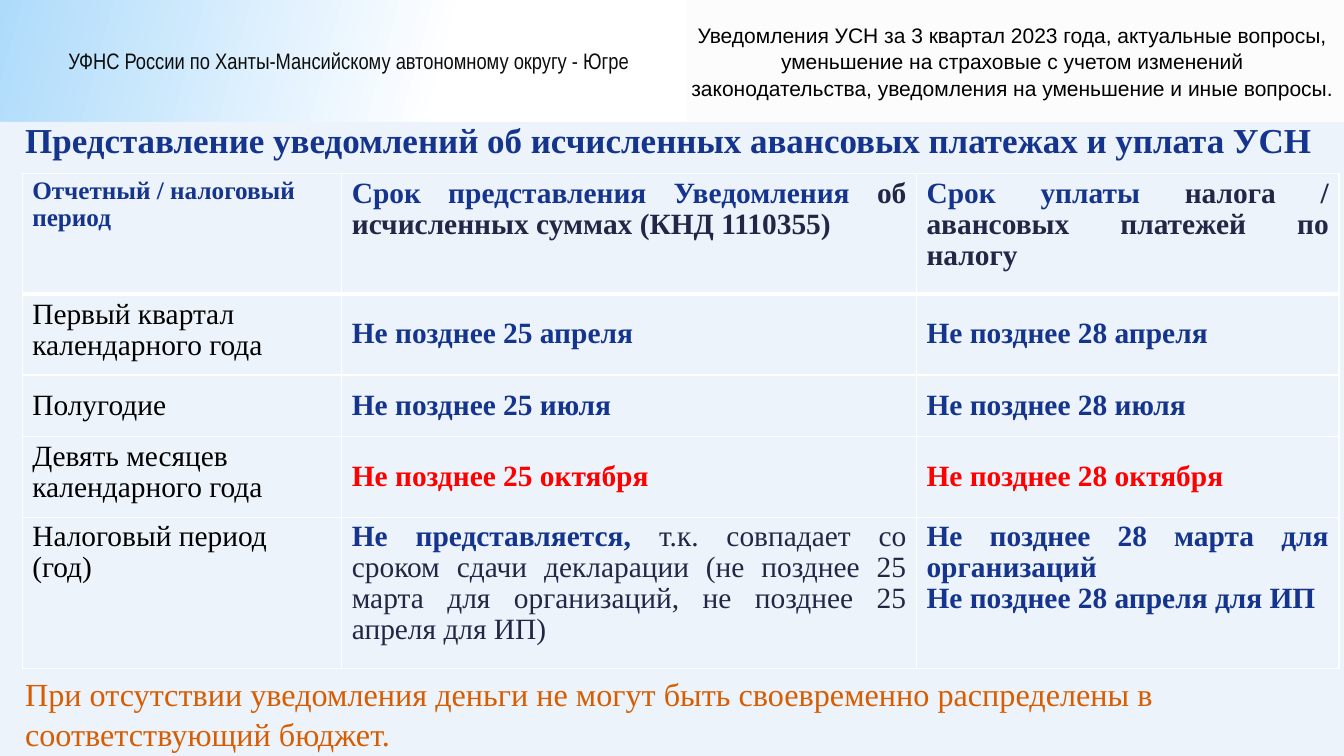
from dataclasses import dataclass

from lxml import etree
from pptx import Presentation
from pptx.dml.color import RGBColor
from pptx.enum.shapes import MSO_SHAPE
from pptx.enum.text import MSO_ANCHOR, MSO_AUTO_SIZE, PP_ALIGN
from pptx.oxml.ns import qn
from pptx.util import Inches, Pt

RECT = MSO_SHAPE.RECTANGLE
TOP, MIDDLE = MSO_ANCHOR.TOP, MSO_ANCHOR.MIDDLE
LEFT, CENTER, JUSTIFY = PP_ALIGN.LEFT, PP_ALIGN.CENTER, PP_ALIGN.JUSTIFY
FIT_SHAPE = MSO_AUTO_SIZE.SHAPE_TO_FIT_TEXT
TITLE_ONLY = 5


@dataclass(frozen=True)
class Theme:
    serif: str = "Times New Roman"
    sans: str = "Arial"
    narrow: str = "Arial Narrow"
    blue: str = "14348E"
    navy: str = "212745"
    red: str = "FF0000"
    orange: str = "D85C00"
    black: str = "000000"
    ink: str = "0D0D0D"
    white: str = "FFFFFF"
    sky: str = "AEDBFB"
    panel: str = "ECF3FA"
    topic: str = "FCFCFC"
    title_size: float = 25
    note_size: float = 23
    cell_size: float = 21
    period_size: float = 18
    office_size: float = 16
    topic_size: float = 15


class SlideBuilder:
    def __init__(self, prs, theme):
        self.theme = theme
        self.slide = prs.slides.add_slide(prs.slide_layouts[TITLE_ONLY])

    def style(self, font, name, size, color, bold=False):
        font.name, font.size, font.bold = name, Pt(size), bold
        font.color.rgb = RGBColor.from_string(color)

    def panel(self, box, color, fade_to=None):
        sp = self.slide.shapes.add_shape(RECT, *map(Inches, box))
        sp.shadow.inherit = False
        sp.line.fill.background()
        if fade_to:
            sp.fill.gradient()
            sp.fill.gradient_angle = 345
            start, end = sp.fill.gradient_stops
            start.color.rgb = RGBColor.from_string(color)
            end.color.rgb = RGBColor.from_string(fade_to)
            start.position, end.position = 0, 0.65
        else:
            sp.fill.solid()
            sp.fill.fore_color.rgb = RGBColor.from_string(color)

    def fill_text(self, sp, text, font, align=LEFT, spacing=1.0):
        tf = sp.text_frame
        tf.word_wrap, tf.auto_size = True, FIT_SHAPE
        tf.vertical_anchor = TOP
        p = tf.paragraphs[0]
        p.text, p.alignment, p.line_spacing = text, align, spacing
        self.style(p.font, *font)

    def text(self, box, text, font, align=LEFT, spacing=1.0):
        sp = self.slide.shapes.add_textbox(*map(Inches, box))
        self.fill_text(sp, text, font, align, spacing)

    def title(self, box, text, font):
        sp = self.slide.shapes.title
        sp.left, sp.top, sp.width, sp.height = map(Inches, box)
        # Bring the title above the background panels
        self.slide.shapes.element.append(sp.element)
        self.fill_text(sp, text, font)

    def borders(self, cell, widths):
        tc_pr = cell._tc.get_or_add_tcPr()
        for i, (side, width) in enumerate(widths.items()):
            ln = etree.Element(qn(f"a:{side}"), w=str(Pt(width)))
            fill = etree.SubElement(ln, qn("a:solidFill"))
            etree.SubElement(fill, qn("a:srgbClr"), val=self.theme.white)
            tc_pr.insert(i, ln)

    def cell(self, cell, paragraphs, align, anchor):
        cell.fill.background()
        cell.vertical_anchor = anchor
        tf = cell.text_frame
        for i, runs in enumerate(paragraphs):
            p = tf.add_paragraph() if i else tf.paragraphs[0]
            p.alignment, p.line_spacing = align, 0.95
            for text, size, color, bold in runs:
                r = p.add_run()
                r.text = text
                self.style(r.font, self.theme.serif, size, color, bold)

    def table(self, left, top, widths, heights, rows, middle):
        box = (left, top, sum(widths), sum(heights))
        table = self.slide.shapes.add_table(
            len(rows), len(widths), *map(Inches, box)).table
        table.horz_banding = False
        for column, width in zip(table.columns, widths):
            column.width = Inches(width)
        for row, height in zip(table.rows, heights):
            row.height = Inches(height)
        for i, row in enumerate(rows):
            for j, paragraphs in enumerate(row):
                cell = table.cell(i, j)
                self.cell(cell, paragraphs, JUSTIFY if j else LEFT,
                          MIDDLE if (i, j) in middle else TOP)
                self.borders(cell, {"lnL": 1, "lnR": 1,
                                    "lnT": 3 if i == 1 else 1,
                                    "lnB": 3 if i == 0 else 1})


def main():
    t = Theme()
    prs = Presentation()
    prs.slide_width, prs.slide_height = Inches(13.33), Inches(7.5)
    s = SlideBuilder(prs, t)

    # Header band and page panel
    s.panel((0, 0, 6.81, 1.21), t.sky, t.white)
    s.text((0.58, 0.41, 5.96, 0.49),
           "УФНС России по Ханты-Мансийскому автономному округу - Югре",
           (t.narrow, t.office_size, t.ink), spacing=1.05)
    s.panel((0, 1.21, 13.33, 6.29), t.panel)
    s.panel((6.81, 0, 6.52, 1.21), t.topic)
    s.text((6.75, 0.16, 6.58, 0.86),
           "Уведомления УСН за 3 квартал 2023 года, актуальные вопросы, "
           "уменьшение на страховые с учетом изменений законодательства, "
           "уведомления на уменьшение и иные вопросы.",
           (t.sans, t.topic_size, t.black), CENTER, 1.05)

    # Title
    s.title((0.15, 1.13, 13.06, 0.52),
            "Представление уведомлений об исчисленных авансовых платежах и уплата УСН",
            (t.serif, t.title_size, t.blue, True))

    # Deadlines table
    def period(text):
        return [[(text, t.cell_size, t.black, False)]]

    def strong(text, color=t.blue):
        return (text, t.cell_size, color, True)

    rows = [
        [[[("Отчетный / налоговый период", t.period_size, t.blue, True)]],
         [[strong("Срок представления Уведомления "),
           strong("об исчисленных суммах (КНД 1110355)", t.navy)]],
         [[strong("Срок уплаты"),
           strong(" налога / авансовых платежей по налогу", t.navy)]]],
    ]
    for name, month, color in (
            ("Первый квартал календарного года", "апреля", t.blue),
            ("Полугодие", "июля", t.blue),
            ("Девять месяцев календарного года", "октября", t.red)):
        rows.append([period(name)] + [
            [[strong(f"Не позднее {day} {month}", color)]] for day in (25, 28)])
    rows.append([
        period("Налоговый период (год)"),
        [[strong("Не представляется, "),
          ("т.к. совпадает со сроком сдачи декларации (не позднее 25 марта "
           "для организаций, не позднее 25 апреля для ИП)",
           t.cell_size, t.navy, False)]],
        [[strong("Не позднее 28 марта для организаций")],
         [strong("Не позднее 28 апреля для ИП")]],
    ])
    middle = {(i, j) for i in (1, 2, 3) for j in (1, 2)} | {(2, 0)}
    s.table(0.22, 1.72, (3.17, 5.7, 4.19), (1.2, 0.8, 0.61, 0.8, 1.5),
            rows, middle)

    # Closing note
    s.text((0.15, 6.62, 13.06, 0.91),
           "При отсутствии уведомления деньги не могут быть своевременно "
           "распределены в соответствующий бюджет.",
           (t.serif, t.note_size, t.orange), spacing=1.05)

    prs.save("out.pptx")


if __name__ == "__main__":
    main()
